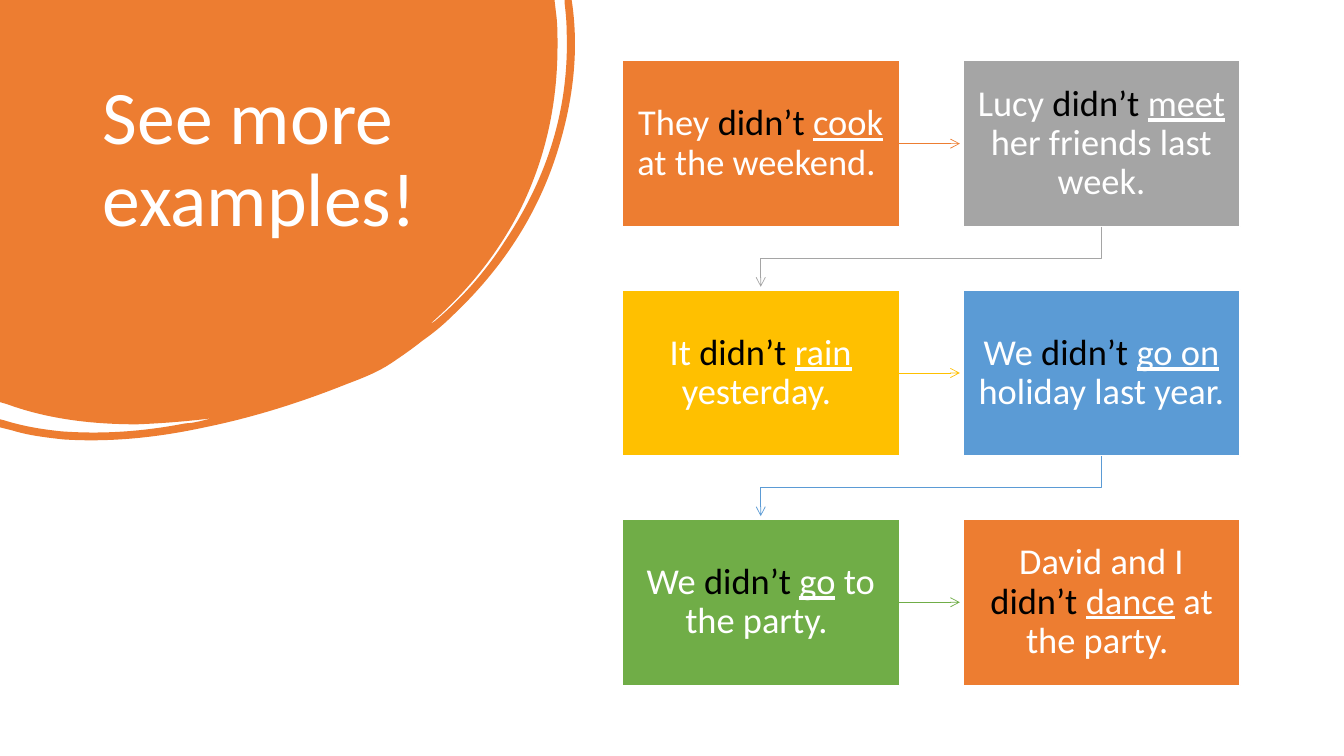
from lxml import etree
from pptx import Presentation
from pptx.dml.color import RGBColor
from pptx.enum.shapes import MSO_CONNECTOR, MSO_SHAPE
from pptx.enum.text import MSO_ANCHOR, MSO_AUTO_SIZE, PP_ALIGN
from pptx.oxml.ns import qn
from pptx.util import Inches, Pt

STRAIGHT = MSO_CONNECTOR.STRAIGHT
RECTANGLE = MSO_SHAPE.RECTANGLE
TOP, MIDDLE = MSO_ANCHOR.TOP, MSO_ANCHOR.MIDDLE
LEFT, CENTER = PP_ALIGN.LEFT, PP_ALIGN.CENTER
NO_AUTOFIT = MSO_AUTO_SIZE.NONE

FONT = "Calibri"
WHITE, BLACK, ORANGE = "FFFFFF", "000000", "ED7D31"
RIGHT_SIDE = 3

# One point is a straight line to it; three points are a cubic curve.
BLOB_WIDTH, BLOB_HEIGHT = 5.71, 4.37
BLOB_OUTLINE = [
    [(0, 0)], [(5.5, 0)], [(5.52, 0.17)],
    [(5.53, 0.26), (5.53, 0.36), (5.53, 0.45)],
    [(5.53, 1.01), (5.42, 1.54), (5.18, 2.04)],
    [(4.96, 2.49), (4.65, 2.88), (4.27, 3.21)],
    [(4.29, 3.21), (4.3, 3.19), (4.32, 3.18)],
    [(4.59, 2.95), (4.82, 2.69), (5.01, 2.39)],
    [(5.43, 1.76), (5.65, 1.07), (5.62, 0.3)],
    [(5.62, 0.21), (5.61, 0.12), (5.6, 0.03)],
    [(5.6, 0)], [(5.67, 0)], [(5.68, 0.07)],
    [(5.74, 0.54), (5.68, 1.02), (5.53, 1.5)],
    [(5.33, 2.14), (4.97, 2.68), (4.48, 3.14)],
    [(4.39, 3.23), (4.29, 3.31), (4.19, 3.38)],
    [(4.09, 3.46), (3.99, 3.53), (3.87, 3.61)],
    [(3.75, 3.69), (3.6, 3.75), (3.44, 3.81)],
    [(2.99, 3.99), (2.52, 4.14), (2.03, 4.24)],
    [(1.57, 4.34), (1.1, 4.39), (0.63, 4.36)],
    [(0.45, 4.34), (0.28, 4.32), (0.12, 4.27)],
    [(0, 4.24)], [(0, 4.16)], [(0.04, 4.17)],
    [(0.23, 4.23), (0.42, 4.26), (0.61, 4.28)],
    [(1.03, 4.31), (1.43, 4.28), (1.84, 4.2)],
    [(1.89, 4.2), (1.93, 4.19), (1.98, 4.18)],
    [(2.02, 4.17), (2.06, 4.16), (2.1, 4.15)],
    [(1.86, 4.18), (1.61, 4.2), (1.36, 4.21)],
    [(0.92, 4.21), (0.48, 4.16), (0.07, 4.01)],
    [(0, 3.99)],
]

# Fill, subject, verb, rest of the sentence
EXAMPLES = [
    (ORANGE, "They ", "cook", " at the weekend. "),
    ("A5A5A5", "Lucy ", "meet", " her friends last week."),
    ("FFC000", "It ", "rain", " yesterday. "),
    ("5B9BD5", "We ", "go on ", "holiday last year. "),
    ("70AD47", "We ", "go", " to the party. "),
    (ORANGE, "David and I ", "dance", " at the party. "),
]


def color(hex_code):
    return RGBColor.from_string(hex_code)


def add_span(para, text, size, hex_code, underline=False):
    span = para.add_run()
    span.text = text
    span.font.name = FONT
    span.font.size = Pt(size)
    span.font.color.rgb = color(hex_code)
    span.font.underline = underline


def add_polygon(page, points, close):
    corners = [(Inches(x), Inches(y)) for x, y in points]
    builder = page.shapes.build_freeform(*corners[0])
    builder.add_line_segments(corners[1:], close=close)
    shape = builder.convert_to_shape()
    shape.shadow.inherit = False
    return shape


def add_blob(page):
    """Draw the outline through its end points, then bend the curved segments."""
    blob = add_polygon(page, [segment[-1] for segment in BLOB_OUTLINE], close=True)
    blob.width, blob.height = Inches(BLOB_WIDTH), Inches(BLOB_HEIGHT)
    outline = blob.element.spPr.find(".//" + qn("a:path"))
    outline.set("w", str(blob.width))
    outline.set("h", str(blob.height))
    for command, segment in zip(list(outline), BLOB_OUTLINE):
        if len(segment) == 3:
            curve = etree.Element(qn("a:cubicBezTo"))
            for x, y in segment:
                etree.SubElement(curve, qn("a:pt"), x=str(Inches(x)), y=str(Inches(y)))
            outline.replace(command, curve)
    blob.fill.solid()
    blob.fill.fore_color.rgb = color(ORANGE)
    blob.line.fill.background()
    return blob


def style_arrow(line_shape, hex_code):
    line_shape.line.color.rgb = color(hex_code)
    line_shape.line.width = Pt(0.5)
    outline = line_shape.element.spPr.find(qn("a:ln"))
    etree.SubElement(outline, qn("a:tailEnd"), type="arrow")


def add_heading(page, left, top, width, height):
    title = page.shapes.title
    title.element.addprevious(add_blob(page).element)
    title.left, title.top = Inches(left), Inches(top)
    title.width, title.height = Inches(width), Inches(height)
    frame = title.text_frame
    frame.word_wrap = True
    frame.auto_size = NO_AUTOFIT
    frame.vertical_anchor = TOP
    para = frame.paragraphs[0]
    para.alignment = LEFT
    para.line_spacing = 0.9
    add_span(para, "See more examples!", 54, WHITE)


def add_example(page, left, top, width, height, example):
    fill, subject, verb, rest = example
    box = page.shapes.add_shape(RECTANGLE, Inches(left), Inches(top),
                                Inches(width), Inches(height))
    box.shadow.inherit = False
    box.fill.solid()
    box.fill.fore_color.rgb = color(fill)
    box.line.color.rgb = color(WHITE)
    box.line.width = Pt(1)
    frame = box.text_frame
    frame.word_wrap = True
    frame.vertical_anchor = MIDDLE
    frame.margin_left = frame.margin_right = Inches(0.13)
    frame.margin_top = frame.margin_bottom = Inches(0.14)
    para = frame.paragraphs[0]
    para.alignment = CENTER
    para.line_spacing = 0.9
    add_span(para, subject, 26, WHITE)
    add_span(para, "didn’t ", 26, BLACK)
    add_span(para, verb, 26, WHITE, underline=True)
    add_span(para, rest, 26, WHITE)
    return box


def add_flow(page, left, top, width, height):
    """Place the examples in two columns, joined in reading order."""
    box_width, box_height = 2.75, 1.65
    column_step = width - box_width
    row_step = (height - box_height) / 2
    arrow_gap = 0.03
    for index, example in enumerate(EXAMPLES):
        row, column = divmod(index, 2)
        x, y = left + column * column_step, top + row * row_step
        box = add_example(page, x, y, box_width, box_height, example)
        if column == 0:
            middle = Inches(y + box_height / 2)
            arrow = page.shapes.add_connector(STRAIGHT, Inches(x + box_width), middle,
                                              Inches(x + column_step - arrow_gap), middle)
            arrow.begin_connect(box, RIGHT_SIDE)
            etree.SubElement(arrow.element.spPr, qn("a:effectLst"))
            style_arrow(arrow, example[0])
        elif index < len(EXAMPLES) - 1:
            start_x, end_x = x + box_width / 2, left + box_width / 2
            bottom, next_top = y + box_height, y + row_step
            bend = (bottom + next_top) / 2
            elbow = add_polygon(page, [(start_x, bottom), (start_x, bend), (end_x, bend),
                                       (end_x, next_top - arrow_gap)], close=False)
            elbow.fill.background()
            style_arrow(elbow, example[0])


def main():
    deck = Presentation()
    deck.slide_width, deck.slide_height = Inches(13.33), Inches(7.5)
    page = deck.slides.add_slide(deck.slide_layouts.get_by_name("Title Only"))
    add_heading(page, 0.92, 0.74, 3.52, 2.22)
    add_flow(page, 6.17, 0.6, 6.13, 6.2)
    deck.save("out.pptx")


if __name__ == "__main__":
    main()
